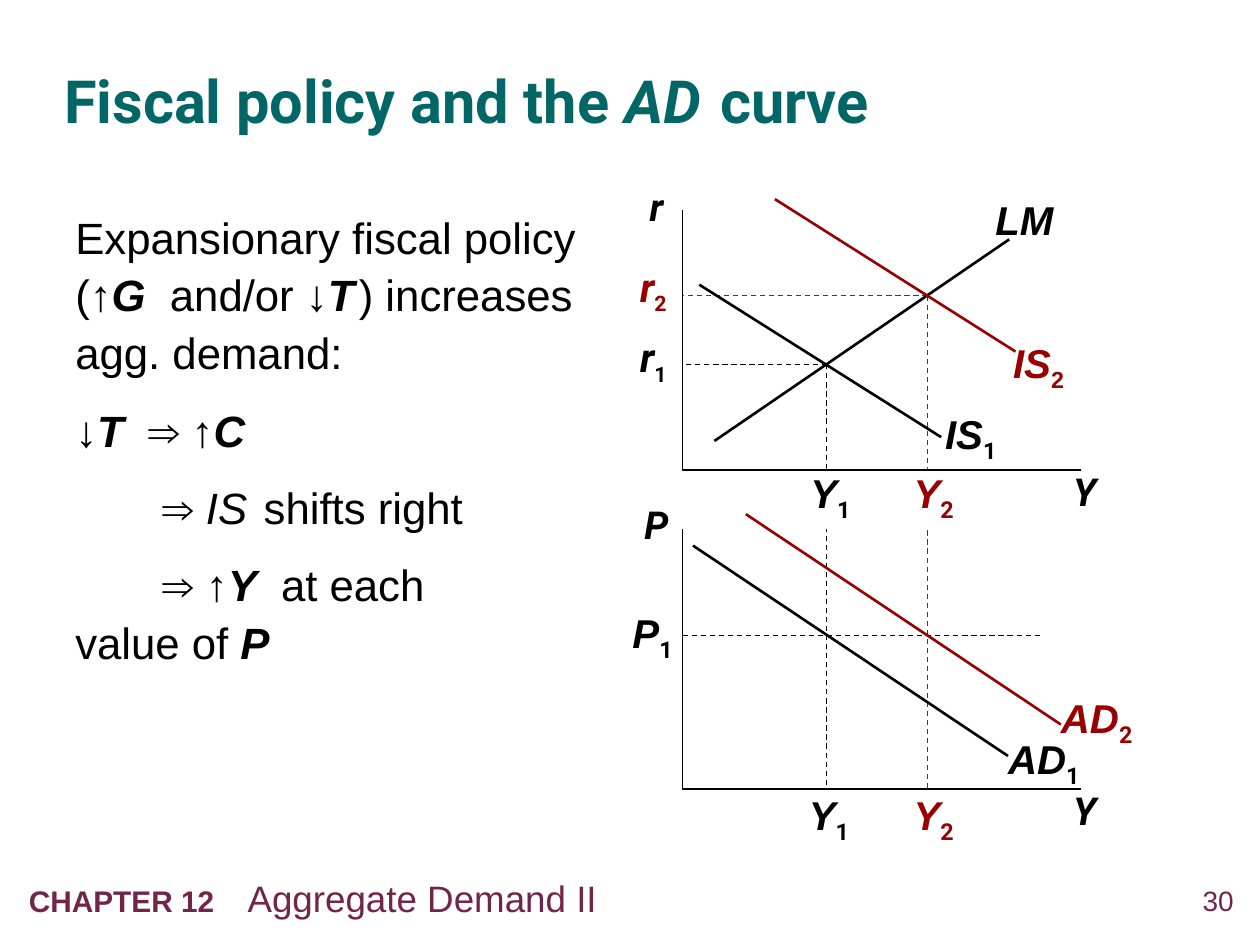
from lxml.etree import SubElement
from pptx import Presentation
from pptx.dml.color import RGBColor
from pptx.enum.dml import MSO_LINE
from pptx.enum.shapes import MSO_CONNECTOR
from pptx.enum.text import MSO_ANCHOR, PP_ALIGN
from pptx.oxml.ns import qn
from pptx.util import Pt

BLACK = RGBColor(0x00, 0x00, 0x00)
WHITE = RGBColor(0xFF, 0xFF, 0xFF)
DARK_RED = RGBColor(0x99, 0x00, 0x00)
RED = RGBColor(0xCC, 0x00, 0x00)
TEAL = RGBColor(0x00, 0x66, 0x66)
PLUM = RGBColor(0x71, 0x25, 0x4B)

deck = Presentation()
deck.slide_width, deck.slide_height = Pt(720), Pt(540)
page = deck.slides.add_slide(deck.slide_layouts[6])


def add_text(para, text, size, color, font="Arial", style="", base=0):
    """Add one run; style holds b for bold and i for italic, base is a percentage."""
    span = para.add_run()
    span.text = text
    span.font.size, span.font.name = Pt(size), font
    span.font.color.rgb = color
    span.font.bold, span.font.italic = "b" in style, "i" in style
    if base:
        span.font._element.set("baseline", str(base * 1000))


def add_line(start, end, color, width, dashed=False):
    line = page.shapes.add_connector(
        MSO_CONNECTOR.STRAIGHT, Pt(start[0]), Pt(start[1]), Pt(end[0]), Pt(end[1]))
    line.line.color.rgb, line.line.width = color, Pt(width)
    if dashed:
        line.line.dash_style = MSO_LINE.DASH
    SubElement(line._element.spPr, qn("a:effectLst"))


# Footer
footer = page.shapes.add_textbox(Pt(9.36), Pt(496.8), Pt(589), Pt(32.4))
footer.text_frame.word_wrap = True
para = footer.text_frame.paragraphs[0]
tabs = SubElement(para._p.get_or_add_pPr(), qn("a:tabLst"))
SubElement(tabs, qn("a:tab"), pos=str(Pt(125)), algn="l")
add_text(para, "CHAPTER 12\t", 17, PLUM, style="b")
add_text(para, "Aggregate Demand II", 21, PLUM)

number = page.shapes.add_textbox(Pt(665.3), Pt(504.7), Pt(39.6), Pt(23))
title = page.shapes.add_textbox(Pt(36.72), Pt(18.72), Pt(649.4), Pt(74.16))
for box in (number, title):
    frame = box.text_frame
    frame.word_wrap = True
    frame.margin_left = frame.margin_top = frame.margin_right = frame.margin_bottom = 0
para = number.text_frame.paragraphs[0]
para.alignment = PP_ALIGN.RIGHT
add_text(para, "30", 16, PLUM)

# Title
title.text_frame.vertical_anchor = MSO_ANCHOR.MIDDLE
para = title.text_frame.paragraphs[0]
para.line_spacing = 1.05
for text, size, style in (("Fiscal policy and the ", 34, "b"), ("AD", 34, "bi"),
                          (" ", 11, "bi"), (" curve", 34, "b")):
    add_text(para, text, size, TEAL, "Roboto", style)

# Argument: first-line indent, then runs of text, size and style
argument = [
    (0, [("Expansionary fiscal policy (↑", 25, ""), ("G", 25, "bi"), ("  and/or ↓", 25, ""),
         ("T", 25, "bi"), (" ", 9, "bi"), (") increases agg. demand:", 25, "")]),
    (0, [("↓", 25, ""), ("T", 25, "bi"), ("  ⇒ ↑", 25, ""), ("C", 25, "bi")]),
    (49.7, [("⇒ ", 25, ""), ("IS", 25, "i"), (" ", 9, "i"), (" shifts right", 25, "")]),
    (49.7, [("⇒ ↑", 25, ""), ("Y", 25, "bi"), ("  at each\vvalue of ", 25, ""),
            ("P", 25, "bi")]),
]
body = page.shapes.add_textbox(Pt(36), Pt(113.8), Pt(300.2), Pt(311.8))
body.text_frame.word_wrap = True
for index, (indent, runs) in enumerate(argument):
    para = body.text_frame.add_paragraph() if index else body.text_frame.paragraphs[0]
    para.line_spacing = 1.1
    para.space_before = Pt(11.25 if index else 0)
    para._p.get_or_add_pPr().set("indent", str(Pt(indent)))
    for text, size, style in runs:
        first, *rest = text.split("\v")
        add_text(para, first, size, BLACK, style=style)
        for part in rest:
            para.add_line_break()
            add_text(para, part, size, BLACK, style=style)

# Guide lines from the equilibria to the axes
AXIS_X, AXIS_END = 390, 618
PANELS = ((120.2, 268.5, "r"), (302.4, 450.7, "P"))
for x, y, color in ((530.1, 169, RED), (472.5, 208.2, BLACK)):
    add_line((x, y), (x, PANELS[1][1]), color, 0.75, dashed=True)
    add_line((x, y), (AXIS_X, y), color, 0.75, dashed=True)
add_line((AXIS_X, 363), (594, 363), BLACK, 0.75, dashed=True)

# Labels: left, top, width, letter, subscript, colour, letter font, subscript font and size
labels = [
    (522, 267.8, 30.2, "Y", "2", DARK_RED, "Arial", "Roboto", 23),
    (522, 451.4, 30.2, "Y", "2", DARK_RED, "Arial", "Roboto", 23),
    (365.8, 149.8, 30.2, "r", "2", DARK_RED, "Roboto", "Roboto", 21),
    (463, 267.8, 30.2, "Y", "1", BLACK, "Arial", "Roboto", 23),
    (462.2, 451.4, 30.2, "Y", "1", BLACK, "Arial", "Roboto", 23),
    (365.8, 190.1, 30.2, "r", "1", BLACK, "Roboto", "Roboto", 21),
    (361.4, 347.8, 30.2, "P", "1", BLACK, "Arial", "Roboto", 23),
    (540, 234, 41.8, "IS", "1", BLACK, "Arial", "Roboto", 23),
    (578.9, 193, 41.8, "IS", "2", DARK_RED, "Arial", "Arial", 23),
    (568.8, 111.6, 48.2, "LM", "", BLACK, "Arial", "Roboto", 23),
    (576, 419.8, 54, "AD", "1", BLACK, "Arial", "Roboto", 23),
    (606.2, 396, 54, "AD", "2", DARK_RED, "Arial", "Roboto", 23),
]
for left, top, width, letter, subscript, color, font, sub_font, sub_size in labels:
    between_panels = letter == "Y" and top < PANELS[1][0]
    box = page.shapes.add_textbox(Pt(left), Pt(top), Pt(width),
                                  Pt(34.6 if between_panels else 27.4))
    if between_panels:  # hides the guide line behind the label
        box.fill.solid()
        box.fill.fore_color.rgb = WHITE
    frame = box.text_frame
    frame.word_wrap = True
    frame.margin_left = frame.margin_top = frame.margin_right = frame.margin_bottom = 0
    para = frame.paragraphs[0]
    add_text(para, letter, 23, color, font, "bi")
    if subscript:
        add_text(para, subscript, sub_size, color, sub_font, "b", -25)

# Axes
for top, bottom, vertical_name in PANELS:
    add_line((AXIS_X, top), (AXIS_X, bottom), BLACK, 1)
    add_line((AXIS_X, bottom), (AXIS_END, bottom), BLACK, 1)
    for name, left, y, width, align in (
            ("Y", 606.2, bottom - 4.3, 41.8, PP_ALIGN.LEFT),
            (vertical_name, 360, top - 19.4, 30.2, PP_ALIGN.CENTER)):
        box = page.shapes.add_textbox(Pt(left), Pt(y), Pt(width), Pt(33.8))
        box.text_frame.word_wrap = True
        para = box.text_frame.paragraphs[0]
        para.alignment = align
        add_text(para, name, 22, BLACK, "Roboto", "bi")

# Curves: IS1, LM, AD1, AD2, IS2
for start, end, color in (
        ((399.6, 162.7), (537.8, 249.8), BLACK),
        ((408.2, 252), (576.7, 136.8), BLACK),
        ((396, 311.8), (576, 432), BLACK),
        ((426.2, 293.8), (606.2, 414), DARK_RED),
        ((442.8, 113.8), (580.3, 200.9), DARK_RED)):
    add_line(start, end, color, 1.5)

deck.save("out.pptx")
